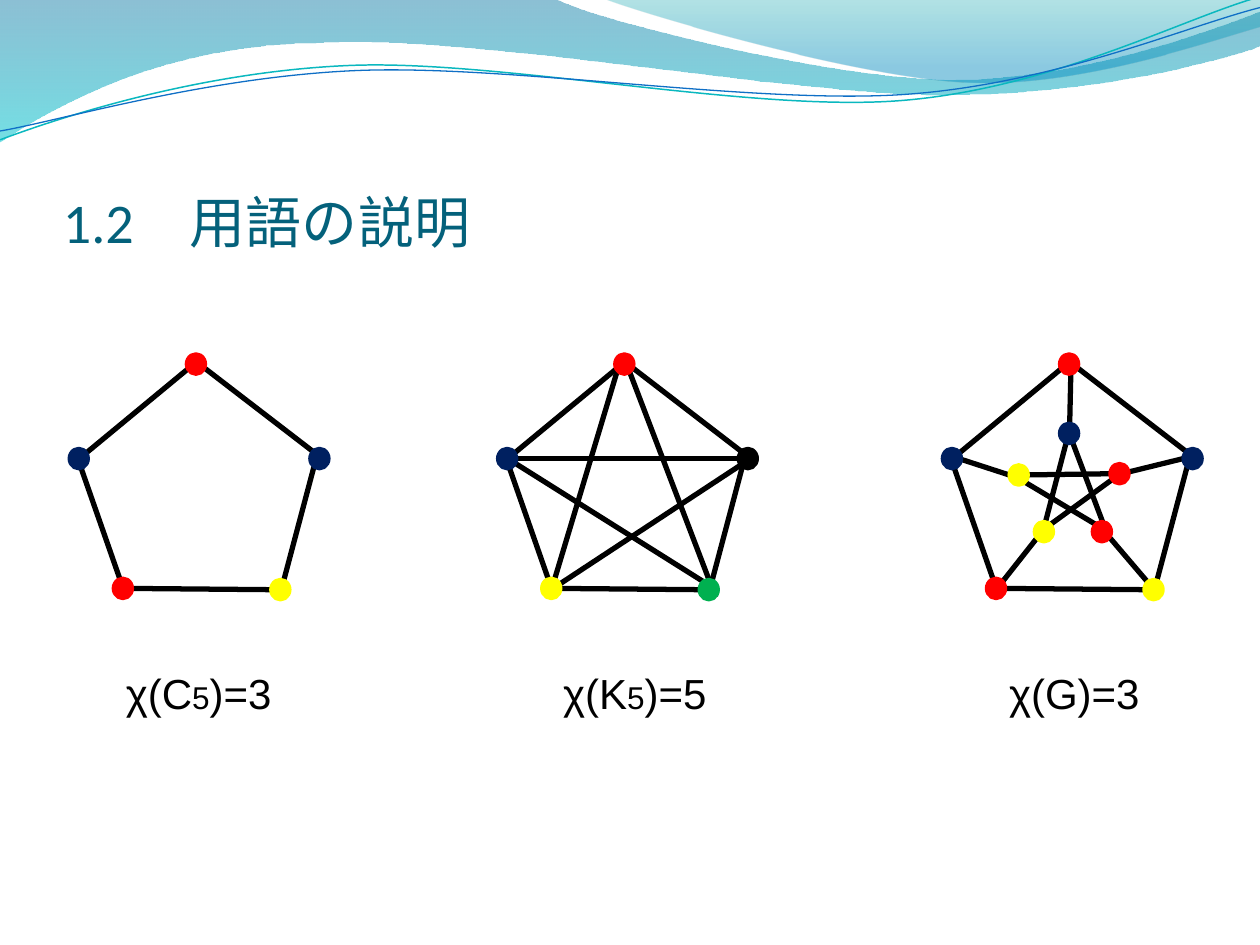
from math import cos, radians, sin

from lxml.etree import SubElement
from pptx import Presentation
from pptx.dml.color import RGBColor
from pptx.enum.shapes import MSO_CONNECTOR as Link, MSO_SHAPE as Shape
from pptx.enum.text import MSO_ANCHOR as Anchor, MSO_AUTO_SIZE as Auto
from pptx.oxml.ns import qn
from pptx.util import Inches, Pt

WIDE, HIGH = 10, 7.5
TITLE = "1.2　用語の説明"
RED, NAVY, YELLOW = "FF0000", "002060", "FFFF00"
GREEN, BLACK = "00B050", "000000"

# Wave pieces: a pair is a straight step, six numbers are a cubic curve.
BANDS = [
    dict(steps=[(-0.01, -0.01), (4.4, -0.01), (4.76, 0.17, 6.64, 0.63, 7.58, 0.63),
                (8.53, 0.63, 9.58, 0.26, 10, 0.09), (10.01, 0.36),
                (9.83, 0.44, 8.7, 0.76, 7.46, 0.75),
                (6.22, 0.75, 3.82, 0.28, 2.57, 0.34),
                (1.29, 0.35, 0.46, 0.83, -0.01, 1.13)],
         stops=[(0, "0074A1", 45), (1, "00C6CF", 55)]),
    dict(steps=[(4.79, -0.01), (5.09, 0.11, 6.82, 0.62, 7.69, 0.65),
                (8.56, 0.69, 9.61, 0.32, 10, 0.21), (10, 0)],
         stops=[(0, "00A1A9", 30), (0.8, "008BBF", 45)]),
]
CURVES = [
    dict(steps=[(0, 1.11), (0.48, 0.93, 1.58, 0.57, 2.77, 0.52),
                (3.95, 0.47, 5.93, 0.89, 7.13, 0.8),
                (8.33, 0.71, 9.38, 0.15, 9.98, -0.02)],
         color="0AB8BF", width=0.85),
    dict(steps=[(0, 1.04), (0.47, 0.96, 1.64, 0.61, 2.83, 0.56),
                (4.03, 0.51, 5.97, 0.83, 7.17, 0.75),
                (8.36, 0.67, 9.41, 0.21, 10, 0.06)],
         color="0F6FC6", width=0.75),
]
TILT, PIVOT = 2.7, (4.99, 0.58)

# Corners of the dots and ends of the edges, from a graph's left edge.
# Dots run clockwise from the top, the outer five before the inner five.
OUTER = [(1.48, 2.81), (2.46, 3.56), (2.15, 4.6), (0.9, 4.59), (0.55, 3.56)]
INNER = [(1.48, 3.36), (1.88, 3.68), (1.74, 4.14), (1.28, 4.14), (1.08, 3.69)]
RING = [(2.15, 4.68, 0.99, 4.67), (0.6, 3.59, 0.96, 4.62),
        (2.53, 3.56, 2.23, 4.69), (1.61, 2.83, 0.63, 3.64),
        (2.48, 3.58, 1.57, 2.88)]
CHORDS = [(2.46, 3.64, 0.65, 3.64), (2.3, 4.69, 0.63, 3.64),
          (2.48, 3.69, 0.99, 4.67), (2.28, 4.74, 1.57, 2.88),
          (0.98, 4.67, 1.5, 2.94)]
STAR = [(1.88, 3.76, 1.18, 3.77), (1.53, 3.52, 1.35, 4.21),
        (1.21, 3.83, 1.83, 4.2), (1.56, 3.45, 1.82, 4.14),
        (1.96, 3.76, 1.41, 4.16)]
SPOKES = [(1.57, 2.9, 1.56, 3.36), (1.3, 4.27, 1, 4.65),
          (1.88, 4.27, 2.23, 4.68), (1.97, 3.76, 2.46, 3.64),
          (0.65, 3.63, 1.08, 3.77)]
FIVE = [RED, NAVY, YELLOW, RED, NAVY]
GRAPHS = [
    dict(left=0, nodes=OUTER, edges=RING, colors=FIVE,
         label=[("χ(C", 24), ("5", 18), (")=3", 24)], box=(0.9, 1.37)),
    dict(left=3.4, nodes=OUTER, edges=RING + CHORDS,
         colors=[RED, BLACK, GREEN, YELLOW, NAVY],
         label=[("χ(K", 24), ("5", 18), (")=5", 24)], box=(4.37, 1.35)),
    dict(left=6.93, nodes=OUTER + INNER, edges=RING + STAR + SPOKES,
         colors=FIVE + [NAVY, RED, RED, YELLOW, YELLOW],
         label=[("χ(G)=3", 24)], box=(7.91, 1.25)),
]

deck = Presentation()
deck.slide_width, deck.slide_height = Inches(WIDE), Inches(HIGH)
slide = deck.slides.add_slide(deck.slide_layouts[6])
shapes = slide.shapes


def rgb(code):
    return RGBColor.from_string(code)


def ink(line, color, width):
    line.color.rgb = rgb(color)
    line.width = Pt(width)


def pairs(step):
    return list(zip(step[::2], step[1::2]))


def outline(steps, close):
    """Build a freeform through the step ends, then bend its cubic steps."""
    ends = [tuple(map(Inches, step[-2:])) for step in steps]
    pen = shapes.build_freeform(*ends[0])
    pen.add_line_segments(ends[1:], close=close)
    shape = pen.convert_to_shape()
    shape.shadow.inherit = False
    legs = list(shape._element.spPr.iter(qn("a:lnTo")))
    for leg, step in zip(legs, steps[1:]):
        if len(step) == 6:
            leg.tag = qn("a:cubicBezTo")
            for n, (x, y) in enumerate(pairs(step)[:2]):
                spot = leg.makeelement(qn("a:pt"), {
                    "x": str(Inches(x) - shape.left),
                    "y": str(Inches(y) - shape.top)})
                leg.insert(n, spot)
    return shape


def band(steps, stops):
    shape = outline(steps, True)
    shape.line.fill.background()
    shape.fill.gradient()
    shape.fill.gradient_angle = 270
    for stop, (place, color, _) in zip(shape.fill.gradient_stops, stops):
        stop.position = place
        stop.color.rgb = rgb(color)
    tints = list(shape._element.spPr.iter(qn("a:srgbClr")))
    for tint, (_, _, solid) in zip(tints, stops):
        SubElement(tint, qn("a:alpha")).set("val", str(solid * 1000))


def turn(step):
    """Turn a step's points clockwise about the pivot."""
    c, s = cos(radians(TILT)), sin(radians(TILT))
    px, py = PIVOT
    return tuple(v for x, y in pairs(step)
                 for v in (px + (x - px) * c - (y - py) * s,
                           py + (x - px) * s + (y - py) * c))


def curve(steps, color, width):
    shape = outline([turn(step) for step in steps], False)
    shape.rotation = 360 - TILT
    shape.fill.background()
    ink(shape.line, color, width)


def text(box, runs, font, color, **frame):
    body = shapes.add_textbox(*map(Inches, box)).text_frame
    for name, value in frame.items():
        setattr(body, name, value)
    for words, size in runs:
        run = body.paragraphs[0].add_run()
        run.text = words
        run.font.color.rgb = rgb(color)
        for name, value in dict(name=font, size=Pt(size)).items():
            setattr(run.font, name, value)


def edge(left, ends):
    x1, y1, x2, y2 = ends
    line = shapes.add_connector(
        Link.STRAIGHT, *map(Inches, (left + x1, y1, left + x2, y2)))
    ink(line.line, BLACK, 3)
    SubElement(line._element.spPr, qn("a:effectLst"))


def node(left, spot, color):
    x, y = spot
    dot = shapes.add_shape(Shape.OVAL, *map(Inches, (left + x, y, 0.15, 0.16)))
    dot.shadow.inherit = False
    dot.fill.solid()
    dot.fill.fore_color.rgb = rgb(color)
    ink(dot.line, color, 2)


def graph(left, nodes, edges, colors, label, box):
    for ends in edges:
        edge(left, ends)
    for spot, color in zip(nodes, colors):
        node(left, spot, color)
    start, width = box
    text((start, 5.25, width, 0.5), label, "Arial", BLACK,
         word_wrap=False, auto_size=Auto.SHAPE_TO_FIT_TEXT)


for item in BANDS:
    band(**item)
for item in CURVES:
    curve(**item)
text((0.5, 0.77, 9, 1.25), [(TITLE, 32)], "Calibri", "04617B", word_wrap=True,
     vertical_anchor=Anchor.BOTTOM, margin_left=0, margin_right=0, margin_bottom=0)
for item in GRAPHS:
    graph(**item)

deck.save("out.pptx")
